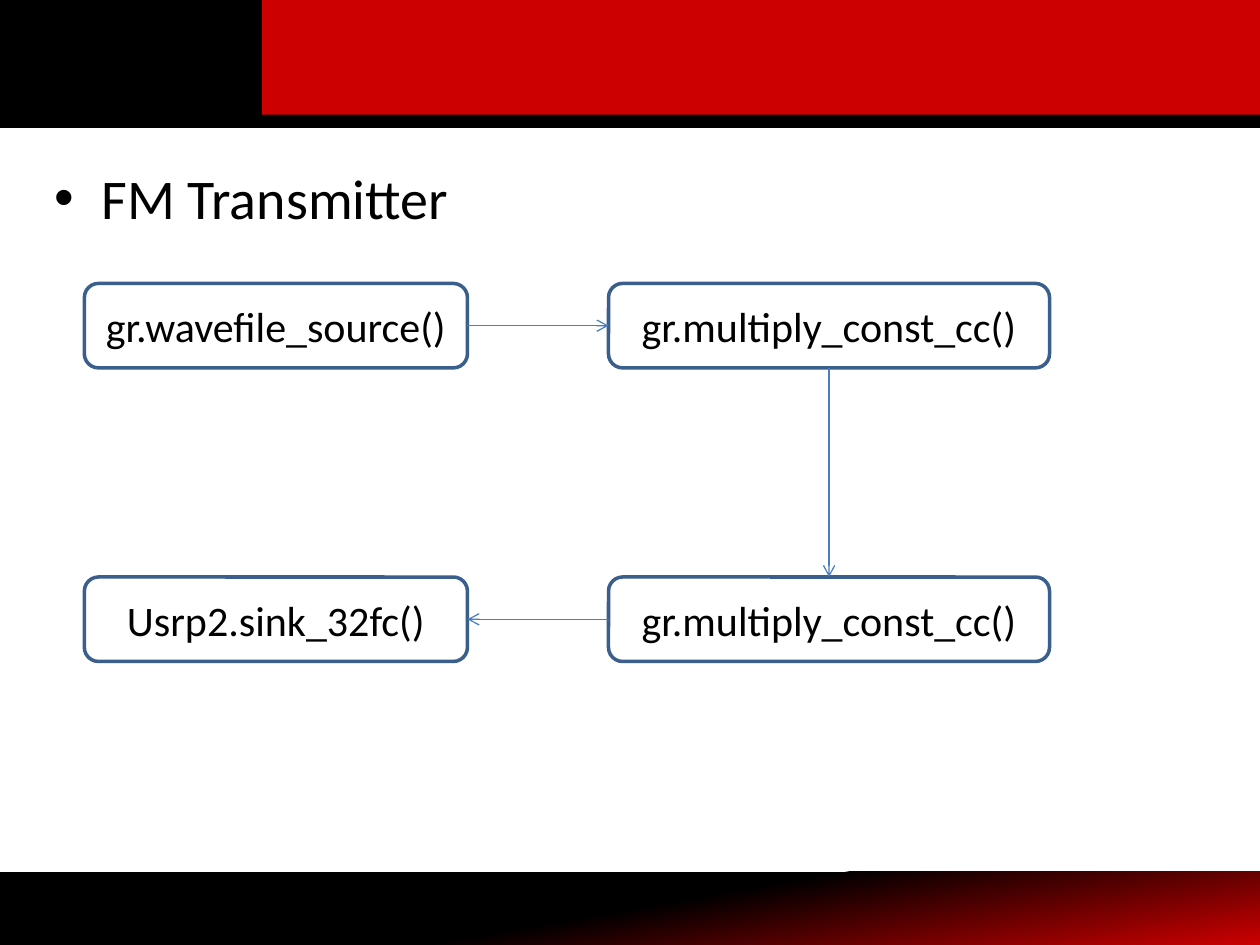
import dataclasses

import lxml.etree
import pptx
import pptx.dml.color
import pptx.enum.shapes
import pptx.enum.text
import pptx.oxml.ns
import pptx.util

Inches = pptx.util.Inches
Points = pptx.util.Pt
Shapes = pptx.enum.shapes.MSO_SHAPE
TOP, LEFT, BOTTOM, RIGHT = range(4)  # connection sites of a block


@dataclasses.dataclass(frozen=True)
class Theme:
    font: str = "Calibri"
    ink: str = "000000"
    accent: str = "CC0000"
    block_line: str = "3A5F8C"
    arrow_line: str = "4B7EBC"
    heading_size: int = 32
    block_size: int = 24
    block_width: float = 2
    arrow_width: float = 0.75


THEME = Theme()
COLUMNS = ((0.67, 3.04), (4.83, 3.5))  # left and width
ROWS = (2.25, 4.58)
BLOCK_HEIGHT = 0.67
# Blocks in signal order: label, column, row
BLOCKS = (
    ("gr.wavefile_source()", 0, 0),
    ("gr.multiply_const_cc()", 1, 0),
    ("gr.multiply_const_cc()", 1, 1),
    ("Usrp2.sink_32fc()", 0, 1),
)
# Site where each arrow leaves a block and site where it enters the next
ROUTES = ((RIGHT, LEFT), (BOTTOM, TOP), (LEFT, RIGHT))


def color(value):
    return pptx.dml.color.RGBColor.from_string(value)


def style_text(para, size):
    for span in para.runs:
        span.font.name = THEME.font
        span.font.size = Points(size)
        span.font.color.rgb = color(THEME.ink)


def add_band(page, box, fill):
    band = page.shapes.add_shape(Shapes.RECTANGLE, *map(Inches, box))
    band.shadow.inherit = False
    band.fill.solid()
    band.fill.fore_color.rgb = color(fill)
    band.line.fill.background()
    return band


def add_header(page, box):
    left, top, width, height = box
    base = add_band(page, box, THEME.ink)
    base.line.color.rgb = color(THEME.ink)
    base.line.width = Points(2)
    inset = 2.08
    add_band(page, (left + inset, top, width - inset, height * 0.91), THEME.accent)


def add_footer(page, box):
    band = add_band(page, box, THEME.ink)
    band.fill.gradient()
    band.fill.gradient_angle = 280
    stops = ((0.5, THEME.ink), (1, THEME.accent))
    for stop, (position, value) in zip(band.fill.gradient_stops, stops):
        stop.position = position
        stop.color.rgb = color(value)


def fill_body(page, box, text):
    body = page.placeholders[1]
    body.left, body.top, body.width, body.height = map(Inches, box)
    body.text_frame.text = text
    style_text(body.text_frame.paragraphs[0], THEME.heading_size)


def add_block(page, box, label):
    block = page.shapes.add_shape(Shapes.ROUNDED_RECTANGLE, *map(Inches, box))
    block.shadow.inherit = False
    block.fill.background()
    block.line.color.rgb = color(THEME.block_line)
    block.line.width = Points(THEME.block_width)
    frame = block.text_frame
    frame.text = label
    frame.vertical_anchor = pptx.enum.text.MSO_ANCHOR.MIDDLE
    para = frame.paragraphs[0]
    para.alignment = pptx.enum.text.PP_ALIGN.CENTER
    style_text(para, THEME.block_size)
    return block


def add_arrow(page, source, source_site, target, target_site):
    arrow = page.shapes.add_connector(
        pptx.enum.shapes.MSO_CONNECTOR.STRAIGHT, 0, 0, 0, 0
    )
    arrow.begin_connect(source, source_site)
    arrow.end_connect(target, target_site)
    arrow.line.color.rgb = color(THEME.arrow_line)
    arrow.line.width = Points(THEME.arrow_width)
    qn = pptx.oxml.ns.qn
    properties = arrow.element.spPr
    lxml.etree.SubElement(properties.find(qn("a:ln")), qn("a:tailEnd"), type="arrow")
    lxml.etree.SubElement(properties, qn("a:effectLst"))


def add_flow(page):
    blocks = []
    for label, column, row in BLOCKS:
        left, width = COLUMNS[column]
        box = (left, ROWS[row], width, BLOCK_HEIGHT)
        blocks.append(add_block(page, box, label))
    for source, target, (leave, enter) in zip(blocks, blocks[1:], ROUTES):
        add_arrow(page, source, leave, target, enter)


def main():
    deck = pptx.Presentation()
    deck.slide_width, deck.slide_height = Inches(10), Inches(7.5)
    page = deck.slides.add_slide(deck.slide_layouts[1])
    title = page.shapes.title.element
    title.getparent().remove(title)
    add_footer(page, (0, 6.92, 10, 0.58))
    add_header(page, (0, 0, 10, 1))
    fill_body(page, (0.33, 1.25, 9.17, 5.45), "FM Transmitter")
    add_flow(page)
    deck.save("out.pptx")


if __name__ == "__main__":
    main()
